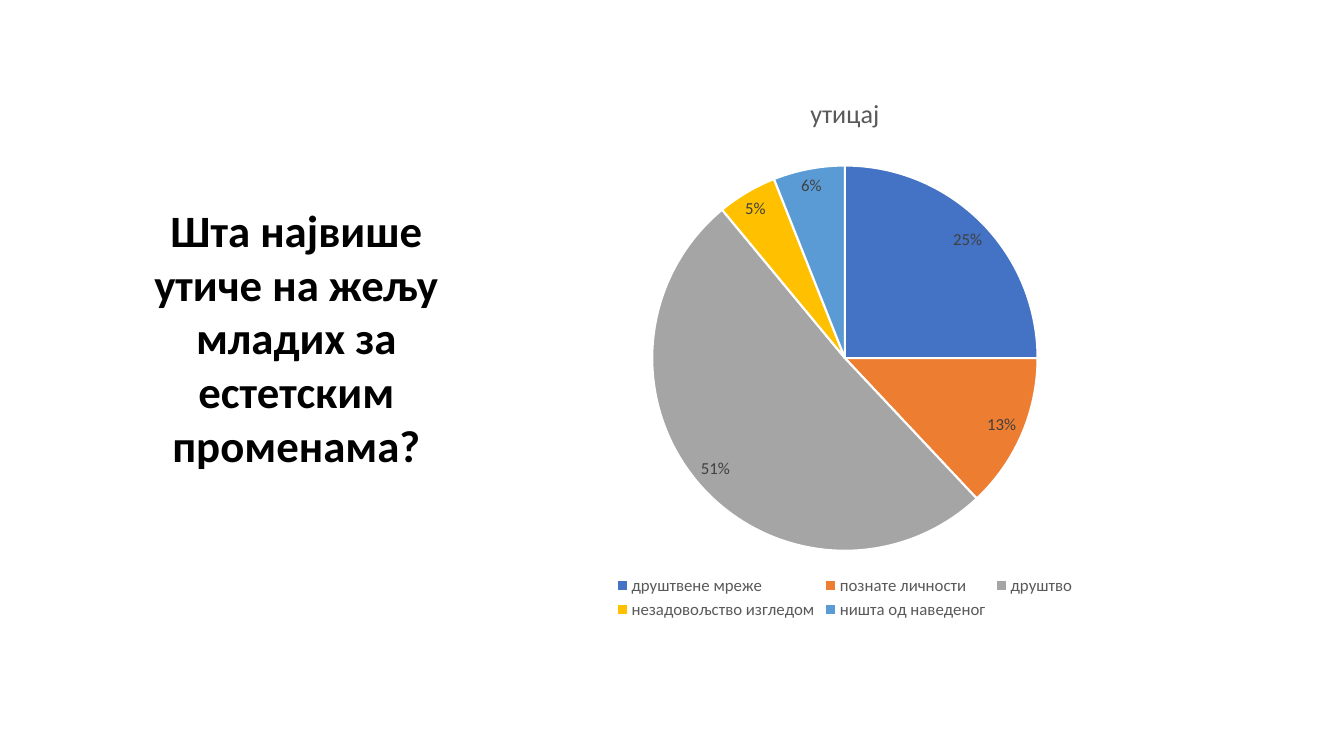
from pptx import Presentation
from pptx.chart.data import CategoryChartData as Data
from pptx.dml.color import RGBColor as RGB
from pptx.enum.chart import XL_CHART_TYPE as Kind, XL_LABEL_POSITION as Spot
from pptx.enum.chart import XL_LEGEND_POSITION as Side
from pptx.enum.text import MSO_ANCHOR as Anchor, MSO_AUTO_SIZE as Fit, PP_ALIGN as Align
from pptx.util import Inches, Pt

COLORS = {"ink": "000000", "grey": "595959", "label": "404040", "edge": "FFFFFF"}
SHARES = {
    "друштвене мреже": (0.25, "4472C4"),
    "познате личности": (0.13, "ED7D31"),
    "друштво": (0.51, "A5A5A5"),
    "незадовољство изгледом": (0.05, "FFC000"),
    "ништа од наведеног": (0.06, "5B9BD5"),
}


class Deck:
    """Hold the style and the current slide."""

    face = "Calibri"

    def __init__(self):
        self.show = Presentation()
        self.show.slide_width = Inches(13.33)
        self.show.slide_height = Inches(7.5)
        self.slide = self.show.slides.add_slide(self.show.slide_layouts[5])

    def style(self, font, size, color, bold=False):
        """Set face, size, colour and weight of a font."""
        font.name, font.size, font.bold = self.face, Pt(size), bold
        font.color.rgb = RGB.from_string(COLORS[color])

    def title(self, text, box):
        """Place and format the slide title."""
        head = self.slide.shapes.title
        head.left, head.top, head.width, head.height = map(Inches, box)
        frame = head.text_frame
        frame.text = text
        frame.word_wrap = True
        frame.auto_size = Fit.SHAPE_TO_FIT_TEXT
        frame.vertical_anchor = Anchor.TOP
        line = frame.paragraphs[0]
        line.alignment = Align.CENTER
        self.style(line.font, 32, "ink", True)

    def pie(self, name, shares, box):
        """Add a pie chart with percent labels and a legend below."""
        data = Data(number_format="0%")
        data.categories = list(shares)
        data.add_series(name, [share for share, _ in shares.values()])
        chart = self.slide.shapes.add_chart(Kind.PIE, *map(Inches, box), data).chart
        self.style(chart.font, 10, "ink")

        chart.has_title = True
        frame = chart.chart_title.text_frame
        frame.text = name
        self.style(frame.paragraphs[0].font, 18.6, "grey")
        chart.chart_title.include_in_layout = False

        chart.has_legend = True
        chart.legend.position = Side.BOTTOM
        chart.legend.include_in_layout = False
        self.style(chart.legend.font, 12, "grey")

        plot = chart.plots[0]
        plot.vary_by_categories = True
        series = plot.series[0]
        for i, (_, color) in enumerate(shares.values()):
            look = series.points[i].format
            look.fill.solid()
            look.fill.fore_color.rgb = RGB.from_string(color)
            look.line.color.rgb = RGB.from_string(COLORS["edge"])
            look.line.width = Pt(1.5)

        labels = series.data_labels
        labels.show_value = True
        labels.number_format = "0%"
        labels.number_format_is_linked = False
        labels.position = Spot.BEST_FIT
        self.style(labels.font, 12, "label")


def main():
    deck = Deck()
    deck.pie("утицај", SHARES, (4.38, 0.74, 8, 5.45))
    deck.title(
        "Шта највише утиче на жељу младих за естетским променама?",
        (1.22, 1.96, 3.44, 2.79),
    )
    deck.show.save("out.pptx")


if __name__ == "__main__":
    main()
